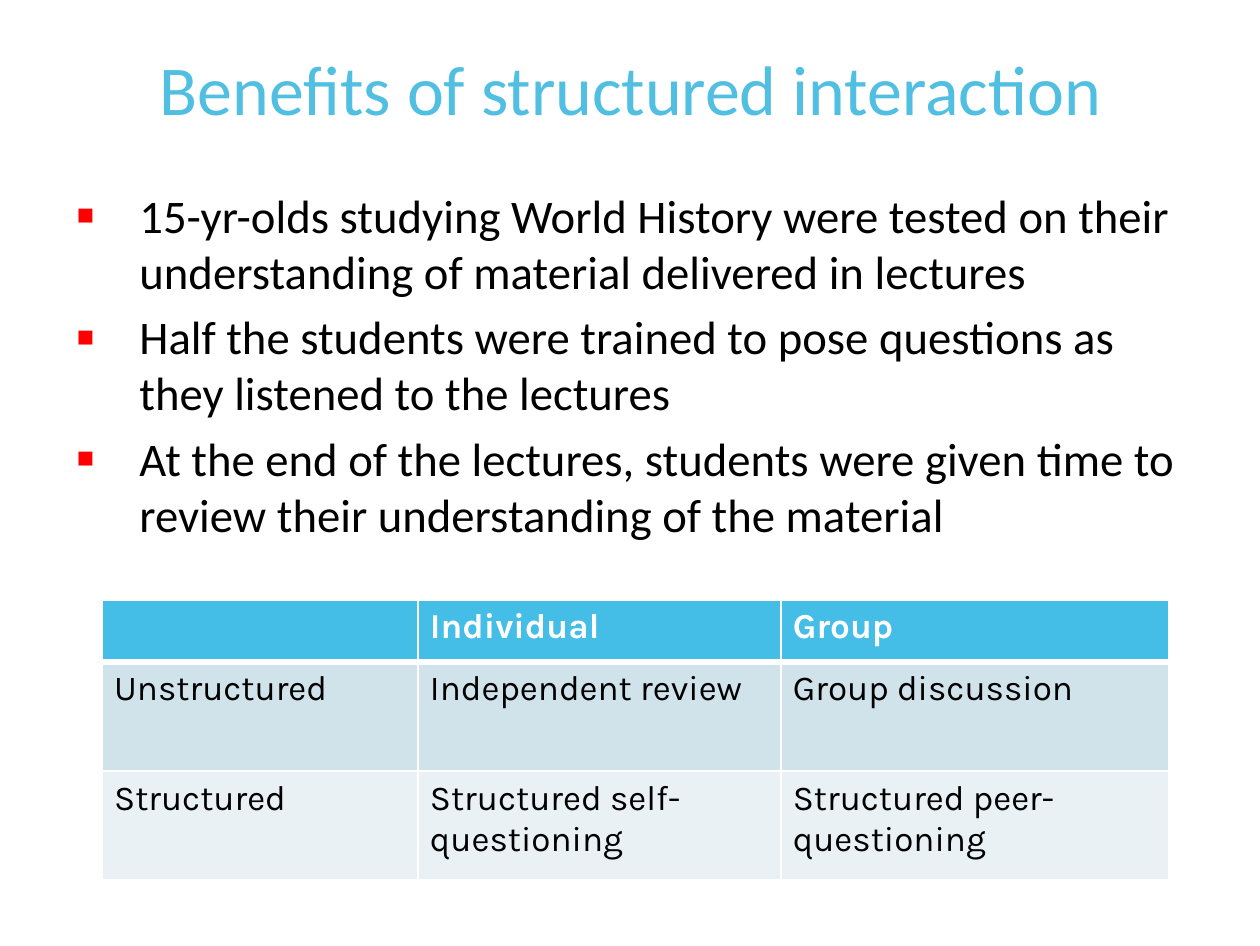
import pptx
import pptx.dml.color
import pptx.enum.text
import pptx.oxml
import pptx.oxml.ns
import pptx.util
from pptx.dml.color import RGBColor
from pptx.util import Inches, Pt

# Content
HEADING = "Benefits of structured interaction"
POINTS = [
    "15-yr-olds studying World History were tested on their understanding of material delivered in lectures",
    "Half the students were trained to pose questions as they listened to the lectures",
    "At the end of the lectures, students were given time to review their understanding of the material",
]
CONDITIONS = [
    ["", "Individual", "Group"],
    ["Unstructured", "Independent review", "Group discussion"],
    ["Structured", "Structured self-questioning", "Structured peer-questioning"],
]
COLUMN_WIDTHS = [1.88, 2.16, 2.31]
ROW_HEIGHTS = [0.37, 0.65, 0.65]

# Colours
BLACK = RGBColor(0x00, 0x00, 0x00)
WHITE = RGBColor(0xFF, 0xFF, 0xFF)
HEADING_BLUE = RGBColor(0x51, 0xBF, 0xE2)
BULLET_RED = RGBColor(0xFF, 0x00, 0x00)
ROW_FILLS = [
    RGBColor(0x44, 0xBD, 0xE7),
    RGBColor(0xD0, 0xE3, 0xEA),
    RGBColor(0xE9, 0xF1, 0xF5),
]


def set_font(paragraph, name, size, color, bold=False):
    font = paragraph.font
    font.name, font.size, font.bold = name, Pt(size), bold
    font.color.rgb = color


def set_margins(part):
    part.margin_left = part.margin_right = Inches(0.07)
    part.margin_top = part.margin_bottom = Inches(0.04)


def place(placeholder, left, top, width, height):
    placeholder.left, placeholder.top = Inches(left), Inches(top)
    placeholder.width, placeholder.height = Inches(width), Inches(height)
    frame = placeholder.text_frame
    set_margins(frame)
    frame.word_wrap = True
    frame.auto_size = pptx.enum.text.MSO_AUTO_SIZE.NONE
    frame.vertical_anchor = pptx.enum.text.MSO_ANCHOR.TOP
    return frame


def add_xml(parent, tag, content="", attributes=""):
    namespace = pptx.oxml.ns.nsdecls("a")
    parent.append(pptx.oxml.parse_xml(
        f"<a:{tag} {namespace} {attributes}>{content}</a:{tag}>"))


def add_bullet(paragraph):
    properties = paragraph._p.get_or_add_pPr()
    indent = Inches(0.38)
    properties.set("marL", str(indent))
    properties.set("indent", str(-indent))
    add_xml(properties, "buClr", f'<a:srgbClr val="{BULLET_RED}"/>')
    add_xml(properties, "buSzPct", attributes='val="120000"')
    add_xml(properties, "buChar", attributes='char="▪"')


def add_borders(cell, widths):
    for side, width in widths.items():
        add_xml(cell._tc.get_or_add_tcPr(), f"ln{side}",
                f'<a:solidFill><a:srgbClr val="{WHITE}"/></a:solidFill>',
                f'w="{Pt(width)}"')


def main():
    deck = pptx.Presentation()
    deck.slide_width, deck.slide_height = Inches(7.5), Inches(5.63)
    slide = deck.slides.add_slide(deck.slide_layouts[1])

    # Title
    heading = place(slide.shapes.title, 0.38, 0.23, 6.75, 0.94)
    heading.text = HEADING
    heading.paragraphs[0].alignment = pptx.enum.text.PP_ALIGN.CENTER
    set_font(heading.paragraphs[0], "Calibri", 30, HEADING_BLUE)

    # Bulleted points
    points = place(slide.placeholders[1], 0.38, 1.07, 6.75, 2.34)
    points.text = "\n".join(POINTS)
    for point in points.paragraphs:
        add_bullet(point)
        point.space_before = Pt(4)
        set_font(point, "Calibri", 20, BLACK)

    # Table of study conditions
    conditions = slide.shapes.add_table(
        len(ROW_HEIGHTS), len(COLUMN_WIDTHS), Inches(0.61), Inches(3.57),
        Inches(sum(COLUMN_WIDTHS)), Inches(sum(ROW_HEIGHTS))).table
    for column, width in zip(conditions.columns, COLUMN_WIDTHS):
        column.width = Inches(width)
    for r, (labels, height) in enumerate(zip(CONDITIONS, ROW_HEIGHTS)):
        conditions.rows[r].height = Inches(height)
        header = r == 0
        for c, label in enumerate(labels):
            cell = conditions.cell(r, c)
            cell.text = label
            set_margins(cell)
            set_font(cell.text_frame.paragraphs[0], "Karla", 15,
                     WHITE if header else BLACK, bold=header)
            add_borders(cell, {"L": 1, "R": 1, "T": 3 if r == 1 else 1,
                               "B": 3 if header else 1})
            cell.fill.solid()
            cell.fill.fore_color.rgb = ROW_FILLS[r]

    deck.save("out.pptx")


if __name__ == "__main__":
    main()
